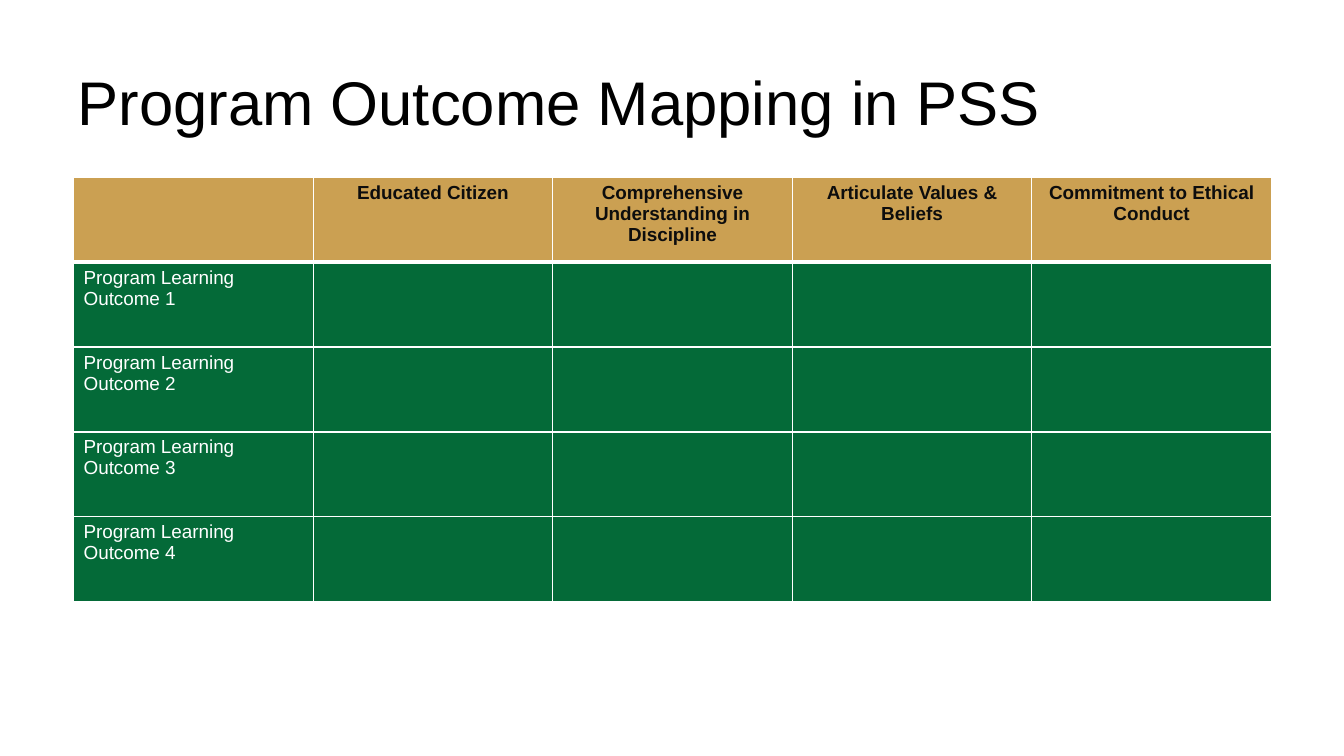
from lxml import etree
from pptx import Presentation
from pptx.dml.color import RGBColor
from pptx.enum.text import MSO_ANCHOR, MSO_AUTO_SIZE, PP_ALIGN
from pptx.oxml.ns import qn
from pptx.util import Inches, Pt

LEFT = PP_ALIGN.LEFT
CENTER = PP_ALIGN.CENTER
TOP = MSO_ANCHOR.TOP
NO_AUTOFIT = MSO_AUTO_SIZE.NONE

BLACK = RGBColor(0x00, 0x00, 0x00)
INK = RGBColor(0x0D, 0x0D, 0x0D)
WHITE = RGBColor(0xFF, 0xFF, 0xFF)
GOLD = RGBColor(0xCB, 0xA0, 0x52)
GREEN = RGBColor(0x04, 0x6A, 0x38)

FONT = "Arial"
TITLE_ONLY = 5
TITLE_BOX = (0.67, 0.51, 12, 1.25)
TABLE_BOX = (0.73, 1.76, 11.88, 4.21)
HEADINGS = [
    "",
    "Educated Citizen",
    "Comprehensive Understanding in Discipline",
    "Articulate Values & Beliefs",
    "Commitment to Ethical Conduct",
]
OUTCOMES = [f"Program Learning Outcome {number}" for number in range(1, 5)]


def write_text(frame, text, size, color, bold=False, align=LEFT):
    para = frame.paragraphs[0]
    para.alignment = align
    span = para.add_run()
    span.text = text
    span.font.name = FONT
    span.font.size = Pt(size)
    span.font.bold = bold
    span.font.color.rgb = color


def set_borders(cell, top, bottom):
    properties = cell._tc.get_or_add_tcPr()
    widths = {"a:lnL": 1, "a:lnR": 1, "a:lnT": top, "a:lnB": bottom}
    for position, (tag, width) in enumerate(widths.items()):
        line = etree.Element(qn(tag), w=str(Pt(width)))
        fill = etree.SubElement(line, qn("a:solidFill"))
        etree.SubElement(fill, qn("a:srgbClr"), val=str(WHITE))
        properties.insert(position, line)


def add_title(page, box, text):
    title = page.shapes.title
    title.left, title.top, title.width, title.height = map(Inches, box)
    frame = title.text_frame
    frame.auto_size = NO_AUTOFIT
    frame.vertical_anchor = TOP
    frame.margin_top = Inches(0.12)
    write_text(frame, text, 44, BLACK)


def add_outcome_map(page, box, headings, outcomes):
    left, top, width, height = map(Inches, box)
    row_count, column_count = len(outcomes) + 1, len(headings)
    table = page.shapes.add_table(
        row_count, column_count, left, top, width, height
    ).table
    for row in range(row_count):
        for column in range(column_count):
            cell = table.cell(row, column)
            cell.fill.solid()
            cell.fill.fore_color.rgb = GREEN if row else GOLD
            set_borders(cell, top=3 if row == 1 else 1, bottom=1 if row else 3)
    for column, heading in enumerate(headings):
        if heading:
            frame = table.cell(0, column).text_frame
            write_text(frame, heading, 13.5, INK, bold=True, align=CENTER)
    for row, outcome in enumerate(outcomes, start=1):
        write_text(table.cell(row, 0).text_frame, outcome, 13.5, WHITE)


def main():
    deck = Presentation()
    deck.slide_width = Inches(13.33)
    deck.slide_height = Inches(7.5)
    page = deck.slides.add_slide(deck.slide_layouts[TITLE_ONLY])
    add_title(page, TITLE_BOX, "Program Outcome Mapping in PSS")
    add_outcome_map(page, TABLE_BOX, HEADINGS, OUTCOMES)
    deck.save("out.pptx")


if __name__ == "__main__":
    main()
